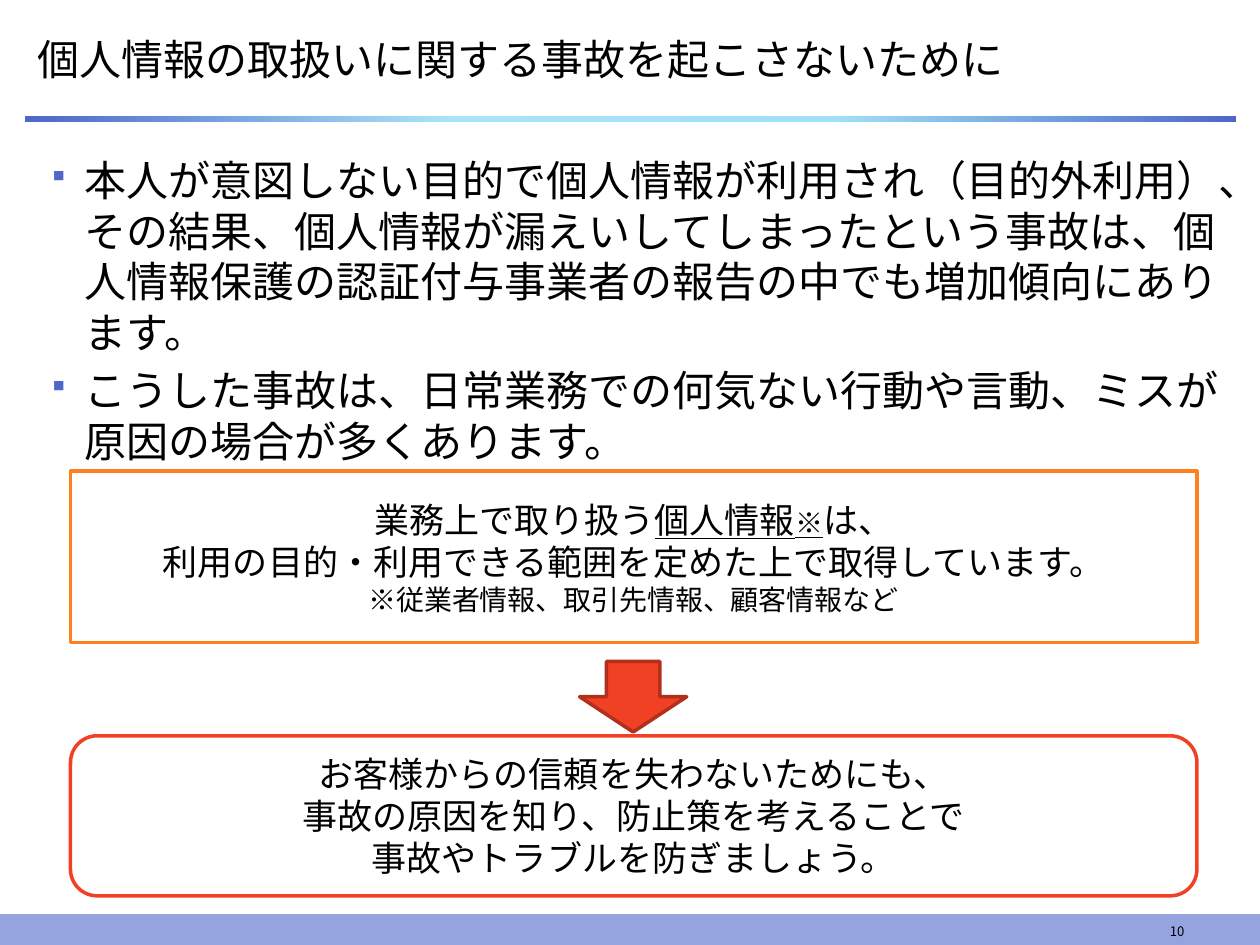
from lxml import etree
from pptx import Presentation
from pptx.dml.color import RGBColor
from pptx.enum.lang import MSO_LANGUAGE_ID
from pptx.enum.shapes import MSO_SHAPE
from pptx.enum.text import MSO_ANCHOR, MSO_AUTO_SIZE, PP_ALIGN
from pptx.oxml.ns import qn
from pptx.util import Inches, Pt

RECT, ROUND, DOWN = MSO_SHAPE.RECTANGLE, MSO_SHAPE.ROUNDED_RECTANGLE, MSO_SHAPE.DOWN_ARROW
LEFT, CENTER, RIGHT = PP_ALIGN.LEFT, PP_ALIGN.CENTER, PP_ALIGN.RIGHT
TOP, MIDDLE, BOTTOM = MSO_ANCHOR.TOP, MSO_ANCHOR.MIDDLE, MSO_ANCHOR.BOTTOM
NO_FIT = MSO_AUTO_SIZE.NONE
JAPANESE = MSO_LANGUAGE_ID.JAPANESE
FONT = "Noto Sans CJK JP"
COLORS = {
    "text": "000000", "white": "FFFFFF", "accent": "4E67C8", "footer": "95A4DE",
    "sky": "A9E3F8", "sky2": "9EE0F7", "orange": "FF8021", "red": "F14124",
    "dark_red": "B2301B",
}
TITLE = "個人情報の取扱いに関する事故を起こさないために"
BULLETS = [
    "本人が意図しない目的で個人情報が利用され（目的外利用）、その結果、個人情報が"
    "漏えいしてしまったという事故は、個人情報保護の認証付与事業者の報告の中でも"
    "増加傾向にあります。",
    "こうした事故は、日常業務での何気ない行動や言動、ミスが原因の場合が多くあります。",
]
PURPOSE = [
    [("業務上で取り扱う", 20, False), ("個人情報", 20, True), ("※", 16, True), ("は、", 20, False)],
    [("利用の目的・利用できる範囲を定めた上で取得しています。", 20, False)],
    [("※従業者情報、取引先情報、顧客情報など", 16, False)],
]
PREVENTION = [
    [("お客様からの信頼を失わないためにも、\n事故の原因を知り、防止策を考えることで", 20, False)],
    [("事故やトラブルを防ぎましょう。", 20, False)],
]


def rgb(name):
    """Return the named colour."""
    return RGBColor.from_string(COLORS[name])


def place(sp, left, top, width, height):
    """Move and size a shape, in inches."""
    sp.left, sp.top = Inches(left), Inches(top)
    sp.width, sp.height = Inches(width), Inches(height)


def add_run(p, text, size, underline=False):
    """Add one formatted run."""
    r = p.add_run()
    r.text = text
    f = r.font
    f.size, f.name, f.language_id = Pt(size), FONT, JAPANESE
    f.color.rgb = rgb("text")
    if underline:
        f.underline = True
    latin = f._element.find(qn("a:latin"))
    ea = etree.Element(qn("a:ea"), typeface=FONT)
    latin.addnext(ea)


def write(tf, paragraphs, align=LEFT, anchor=TOP):
    """Fill a text frame with paragraphs of (text, size, underline) runs."""
    tf.word_wrap, tf.auto_size, tf.vertical_anchor = True, NO_FIT, anchor
    for i, runs in enumerate(paragraphs):
        p = tf.paragraphs[0] if i == 0 else tf.add_paragraph()
        p.alignment = align
        p.line_spacing = Pt(1.2 * max(size for _, size, _ in runs))
        for text, size, underline in runs:
            for j, line in enumerate(text.split("\n")):
                if j:
                    p.add_line_break()
                add_run(p, line, size, underline)


def add_bullet(p):
    """Give a paragraph a small square bullet with a hanging indent."""
    p.space_before = Pt(4.8)
    pPr = p._p.get_or_add_pPr()
    pPr.set("marL", str(Inches(0.26)))
    pPr.set("indent", str(Inches(-0.26)))
    clr = etree.SubElement(pPr, qn("a:buClr"))
    etree.SubElement(clr, qn("a:srgbClr"), val=COLORS["accent"])
    etree.SubElement(pPr, qn("a:buSzPct"), val="75000")
    etree.SubElement(pPr, qn("a:buFont"), typeface="Wingdings")
    etree.SubElement(pPr, qn("a:buChar"), char="§")


def add_box(s, kind, at, fill, line=None, weight=2):
    """Add a preset shape with a solid fill and an optional outline."""
    sp = s.shapes.add_shape(kind, *map(Inches, at))
    sp.shadow.inherit = False
    sp.fill.solid()
    sp.fill.fore_color.rgb = rgb(fill)
    if line:
        sp.line.color.rgb = rgb(line)
        sp.line.width = Pt(weight)
    else:
        sp.line.fill.background()
    return sp


def add_message(s, kind, at, line, paragraphs):
    """Add an outlined box with centred text."""
    tf = add_box(s, kind, at, "white", line).text_frame
    tf.margin_left = tf.margin_right = Inches(0.08)
    tf.margin_top = tf.margin_bottom = Inches(0.01)
    write(tf, paragraphs, CENTER, MIDDLE)


def add_gradient_bar(s, at, stops):
    """Add a bar with a left-to-right gradient."""
    sp = add_box(s, RECT, at, "accent")
    sp.fill.gradient()
    sp.fill.gradient_angle = 0
    gs_list = sp._element.spPr.find(qn("a:gradFill")).find(qn("a:gsLst"))
    for gs in list(gs_list):
        gs_list.remove(gs)
    for percent, color in stops:
        gs = etree.SubElement(gs_list, qn("a:gs"), pos=str(percent * 1000))
        etree.SubElement(gs, qn("a:srgbClr"), val=COLORS[color])


def main():
    """Build the slide."""
    prs = Presentation()
    prs.slide_width, prs.slide_height = Inches(10), Inches(7.5)
    s = prs.slides.add_slide(prs.slide_layouts[1])

    add_box(s, RECT, (0, 7.26, 10, 0.24), "footer", "footer", 0.75)
    add_gradient_bar(s, (0.2, 0.92, 9.61, 0.05),
                     [(0, "accent"), (35, "sky"), (67, "sky2"), (100, "accent")])

    title, body = s.shapes.title, s.placeholders[1]
    place(title, 0.2, 0.14, 9.61, 0.65)
    write(title.text_frame, [[(TITLE, 24, False)]], LEFT, MIDDLE)
    place(body, 0.31, 1.18, 9.49, 5.34)
    write(body.text_frame, [[(text, 24, False)] for text in BULLETS])
    for p in body.text_frame.paragraphs:
        add_bullet(p)

    number = s.shapes.add_textbox(*map(Inches, (7.17, 7.26, 2.33, 0.24)))
    write(number.text_frame, [[("10", 7.5, False)]], RIGHT, BOTTOM)

    add_box(s, DOWN, (4.6, 5.25, 0.85, 0.56), "red", "dark_red")
    add_message(s, RECT, (0.56, 3.74, 8.94, 1.36), "orange", PURPOSE)
    add_message(s, ROUND, (0.56, 5.84, 8.94, 1.27), "red", PREVENTION)
    prs.save("out.pptx")


if __name__ == "__main__":
    main()
